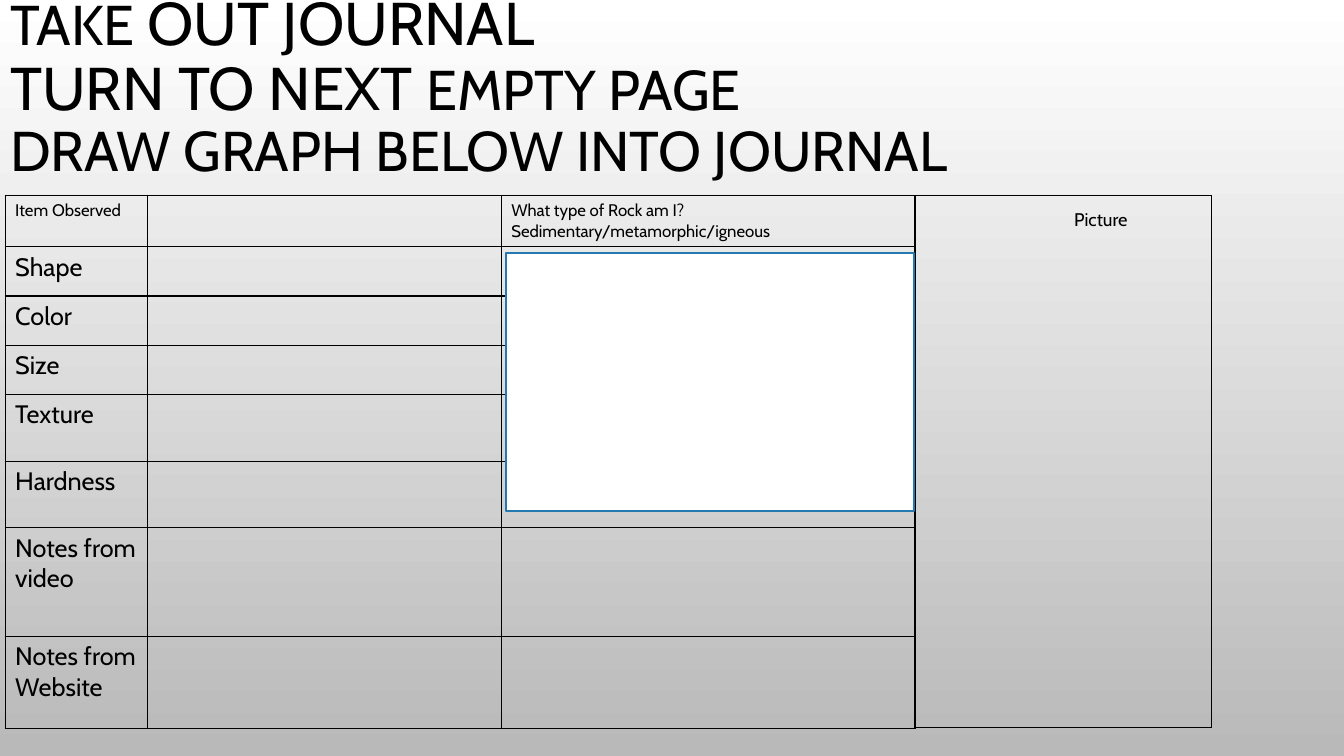
from dataclasses import dataclass

from lxml.etree import SubElement
from pptx import Presentation
from pptx.dml.color import RGBColor as RGB
from pptx.enum.shapes import MSO_SHAPE as Shape
from pptx.enum.text import MSO_ANCHOR as Anchor, MSO_AUTO_SIZE as AutoSize, PP_ALIGN as Align
from pptx.oxml import parse_xml
from pptx.oxml.ns import nsdecls, qn
from pptx.util import Cm, Pt


@dataclass(frozen=True)
class Theme:
    font: str = "Cabin"
    ink: RGB = RGB(0, 0, 0)
    paper: RGB = RGB(255, 255, 255)
    shade: RGB = RGB(0xB9, 0xB9, 0xB9)
    accent: RGB = RGB(0x23, 0x79, 0xB0)
    title: float = 40
    title_large: float = 43.1
    heading: float = 12
    label: float = 18
    caption: float = 13.1
    border: float = 1
    box_line: float = 1.25


THEME = Theme()

# Each title line is a list of (text, size)
TITLE_LINES = [
    [("TAKE ", THEME.title), ("OUT JOURNAL", THEME.title_large)],
    [("TURN TO NEXT ", THEME.title_large), ("EMPTY PAGE", THEME.title)],
    [("DRAW GRAPH BELOW INTO JOURNAL", THEME.title)],
]

HEADINGS = ["Item Observed", "", "What type of Rock am I?\nSedimentary/metamorphic/igneous"]
OBSERVATIONS = ["Shape", "Color", "Size", "Texture", "Hardness",
                "Notes from video", "Notes from Website"]
COLUMN_WIDTHS = [3.58, 8.92, 10.44]
ROW_HEIGHTS = [1.09, 1.24, 1.24, 1.24, 1.68, 1.68, 2.74, 2.31]
TABLE_TOP = 4.93


def style_font(font, size):
    font.name = THEME.font
    font.size = Pt(size)
    font.color.rgb = THEME.ink


def style_text(frame, size):
    for paragraph in frame.paragraphs:
        for run in paragraph.runs:
            style_font(run.font, size)


def paint_background(slide):
    fill = slide.background.fill
    fill.gradient()
    fill.gradient_angle = 270
    for stop, color in zip(fill.gradient_stops, (THEME.paper, THEME.shade)):
        stop.color.rgb = color


def fill_title(title):
    title.left, title.top, title.width, title.height = Cm(0), Cm(0), Cm(31.32), Cm(4.45)
    frame = title.text_frame
    frame.word_wrap = True
    frame.auto_size = AutoSize.NONE
    frame.vertical_anchor = Anchor.MIDDLE
    heading = frame.paragraphs[0]
    heading.alignment = Align.LEFT
    heading.line_spacing = 0.9
    for index, line in enumerate(TITLE_LINES):
        if index:
            heading.add_line_break()
        for text, size in line:
            run = heading.add_run()
            run.text = text
            style_font(run.font, size)


def add_borders(cell):
    properties = cell._tc.get_or_add_tcPr()
    for index, side in enumerate(("lnL", "lnR", "lnT", "lnB")):
        line = parse_xml(
            f'<a:{side} {nsdecls("a")} w="{Pt(THEME.border)}"><a:solidFill>'
            f'<a:srgbClr val="{THEME.ink}"/></a:solidFill></a:{side}>')
        properties.insert(index, line)


def add_grid(slide, left, widths, heights):
    grid = slide.shapes.add_table(len(heights), len(widths), Cm(left), Cm(TABLE_TOP),
                                  Cm(sum(widths)), Cm(sum(heights))).table
    grid.first_row = grid.horz_banding = False
    for column, width in zip(grid.columns, widths):
        column.width = Cm(width)
    for row, height in zip(grid.rows, heights):
        row.height = Cm(height)
    for cell in grid.iter_cells():
        cell.fill.background()
        add_borders(cell)
    return grid


def write_cell(cell, text, size):
    cell.text_frame.text = text
    style_text(cell.text_frame, size)


def add_caption(slide, text, left, top, width, height):
    frame = slide.shapes.add_textbox(Cm(left), Cm(top), Cm(width), Cm(height)).text_frame
    frame.word_wrap = True
    frame.auto_size = AutoSize.SHAPE_TO_FIT_TEXT
    frame.text = text
    frame.paragraphs[0].alignment = Align.CENTER
    style_text(frame, THEME.caption)


def add_blank_box(slide, left, top, width, height):
    box = slide.shapes.add_shape(Shape.RECTANGLE, Cm(left), Cm(top), Cm(width), Cm(height))
    box.shadow.inherit = False
    box.fill.solid()
    box.fill.fore_color.rgb = THEME.paper
    box.line.color.rgb = THEME.accent
    box.line.width = Pt(THEME.box_line)


def main():
    deck = Presentation()
    deck.slide_width, deck.slide_height = Cm(33.87), Cm(19.05)
    slide = deck.slides.add_slide(deck.slide_layouts[5])
    paint_background(slide)
    fill_title(slide.shapes.title)

    # Observation table
    observations = add_grid(slide, 0.13, COLUMN_WIDTHS, ROW_HEIGHTS)
    for column, heading in enumerate(HEADINGS):
        if heading:
            write_cell(observations.cell(0, column), heading, THEME.heading)
    for row, label in enumerate(OBSERVATIONS, start=1):
        write_cell(observations.cell(row, 0), label, THEME.label)

    # Drawing area with its caption
    add_grid(slide, 23.04, [7.49], [13.41])
    add_caption(slide, "Picture", 24.38, 5.11, 6.73, 0.64)

    # Blank box over the rock type column
    add_blank_box(slide, 12.75, 6.38, 10.29, 6.5)

    deck.save("out.pptx")


if __name__ == "__main__":
    main()
